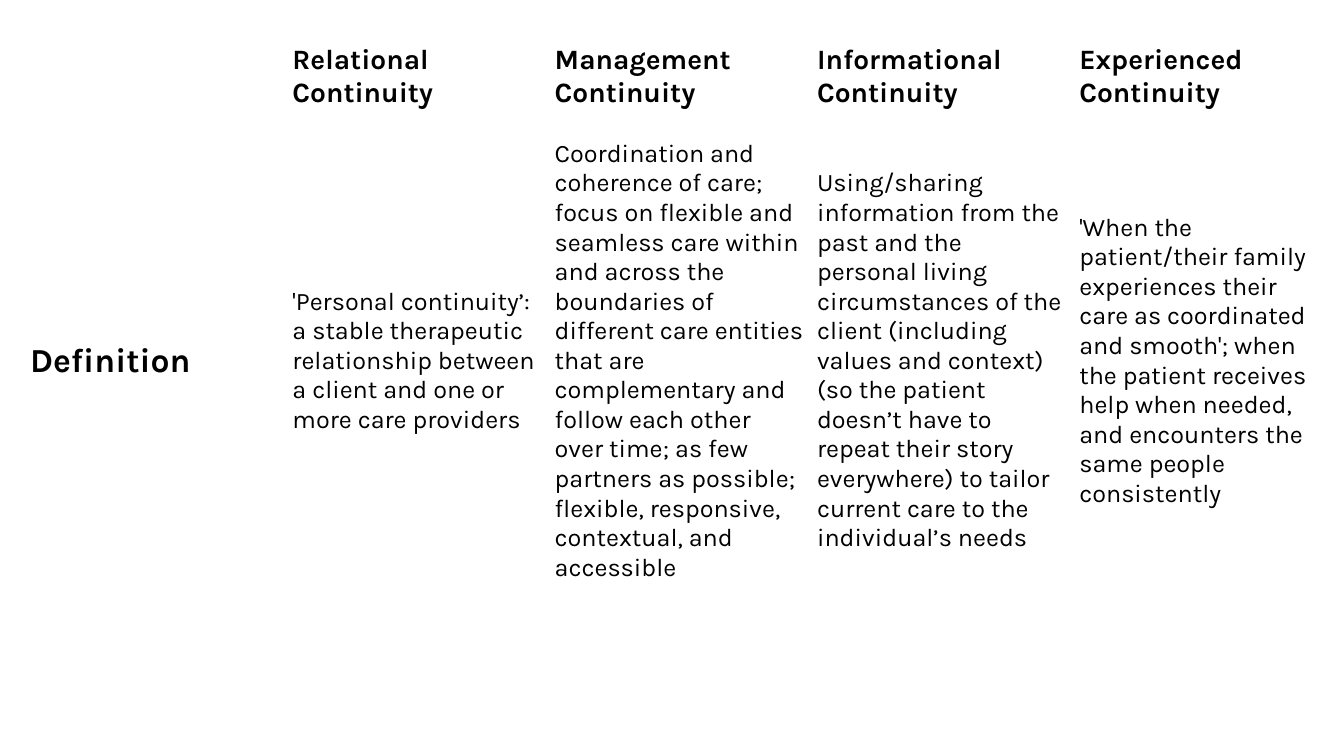
from dataclasses import dataclass

from pptx import Presentation
from pptx.dml.color import RGBColor
from pptx.enum.text import MSO_ANCHOR
from pptx.util import Cm, Pt

BLACK = RGBColor(0x00, 0x00, 0x00)
WHITE = RGBColor(0xFF, 0xFF, 0xFF)
FONT = "Karla"

COLUMN_WIDTH = Cm(6.61)
ROW_HEIGHTS = [Cm(1.78), Cm(12.52)] + [Cm(1.02)] * 4
SIDE_MARGIN, END_MARGIN = Cm(0.15), Cm(0.08)


@dataclass
class Continuity:
    heading: str
    definition: str


CONTINUITIES = [
    Continuity(
        "Relational Continuity",
        "'Personal continuity’: a stable therapeutic relationship between "
        "a client and one or more care providers",
    ),
    Continuity(
        "Management Continuity",
        "Coordination and coherence of care; focus on flexible and seamless "
        "care within and across the boundaries of different care entities "
        "that are complementary and follow each other over time; as few "
        "partners as possible; flexible, responsive, contextual, and accessible",
    ),
    Continuity(
        "Informational Continuity",
        "Using/sharing information from the past and the personal living "
        "circumstances of the client (including values and context) (so the "
        "patient doesn’t have to repeat their story everywhere) to tailor "
        "current care to the individual’s needs",
    ),
    Continuity(
        "Experienced Continuity",
        "'When the patient/their family experiences their care as coordinated "
        "and smooth'; when the patient receives help when needed, and "
        "encounters the same people consistently",
    ),
]


def write_cell(cell, text: str, size: int, bold: bool) -> None:
    cell.text = text
    cell.vertical_anchor = MSO_ANCHOR.MIDDLE
    cell.margin_left = cell.margin_right = SIDE_MARGIN
    cell.margin_top = cell.margin_bottom = END_MARGIN
    font = cell.text_frame.paragraphs[0].font
    font.name, font.size, font.bold = FONT, Pt(size), bold
    font.color.rgb = BLACK


def add_definitions(slide) -> None:
    column_count = len(CONTINUITIES) + 1
    definitions = slide.shapes.add_table(
        len(ROW_HEIGHTS), column_count, Cm(0.61), Cm(1.02),
        COLUMN_WIDTH * column_count, sum(ROW_HEIGHTS),
    ).table
    definitions.first_row = definitions.horz_banding = False

    # Grid
    for column in definitions.columns:
        column.width = COLUMN_WIDTH
    for row, height in zip(definitions.rows, ROW_HEIGHTS):
        row.height = height
    for cell in definitions.iter_cells():
        cell.fill.solid()
        cell.fill.fore_color.rgb = WHITE

    # Headings and definitions
    write_cell(definitions.cell(1, 0), "Definition", 24, True)
    for index, continuity in enumerate(CONTINUITIES, start=1):
        write_cell(definitions.cell(0, index), continuity.heading, 20, True)
        write_cell(definitions.cell(1, index), continuity.definition, 18, False)


def main() -> None:
    presentation = Presentation()
    presentation.slide_width, presentation.slide_height = Cm(33.87), Cm(19.05)
    blank_layout = presentation.slide_layouts[6]
    add_definitions(presentation.slides.add_slide(blank_layout))
    presentation.save("out.pptx")


if __name__ == "__main__":
    main()
